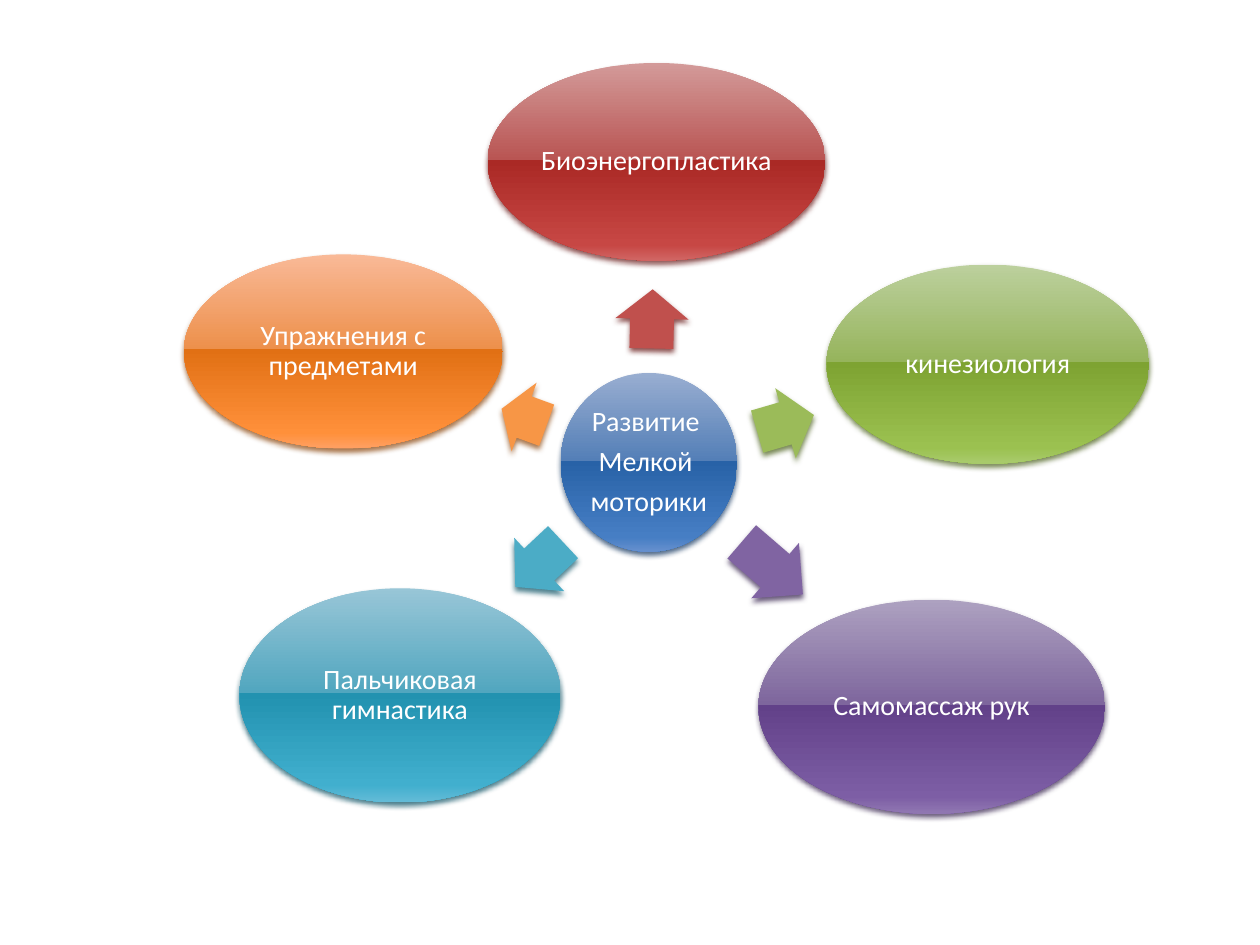
import pptx
import pptx.dml.color
import pptx.enum.shapes
import pptx.enum.text
import pptx.oxml
import pptx.oxml.ns
import pptx.util
from dataclasses import dataclass

Pt = pptx.util.Pt
RGB = pptx.dml.color.RGBColor.from_string
SHAPE = pptx.enum.shapes.MSO_SHAPE
qn = pptx.oxml.ns.qn
NS = pptx.oxml.ns.nsdecls("a")


@dataclass
class Theme:
    font: str = "Calibri"
    size: float = 16
    text: str = "FFFFFF"
    stops: tuple = (0, 49, 49, 92, 100)
    # Each palette: flat fill, shadow, then the five gloss colours
    blue: tuple = ("4F81BD", "315075", "99AED1 547FB7 2862A7 467EC4 6690CE")
    red: tuple = ("C0504D", "773130", "D39A99 B95553 AA2925 C74744 D16765")
    green: tuple = ("9BBB59", "607337", "BCD09D 96B45C 7EA332 9BC150 A9CB6D")
    purple: tuple = ("8064A2", "4F3E64", "ADA1C0 7E669D 624189 7D5EA5 9178B2")
    teal: tuple = ("4BACC6", "2E6A7A", "98C6D7 51A6BF 2292B0 41AFCE 63BBD7")
    orange: tuple = ("F79646", "995D2B", "F9B997 ED904B E17014 FF903A FFA063")


class Diagram:
    def __init__(self, slide, theme):
        self.slide, self.theme = slide, theme

    def shape(self, kind, box, shadow):
        s = self.slide.shapes.add_shape(kind, *(Pt(v) for v in box))
        s.line.fill.background()
        s.shadow.inherit = False
        s._element.spPr.find(qn("a:effectLst")).append(pptx.oxml.parse_xml(
            f'<a:outerShdw {NS} blurRad="{Pt(3.1)}" dist="{Pt(2)}" dir="5400000" '
            f'rotWithShape="0"><a:srgbClr val="{shadow}"><a:alpha val="83000"/>'
            '</a:srgbClr></a:outerShdw>'))
        return s

    def gloss(self, s, colors):
        s.fill.gradient()
        s.fill.gradient_angle = 270
        stops = s._element.spPr.find(qn("a:gradFill")).find(qn("a:gsLst"))
        for old in list(stops):
            stops.remove(old)
        for pos, color in zip(self.theme.stops, colors.split()):
            stops.append(pptx.oxml.parse_xml(
                f'<a:gs {NS} pos="{pos * 1000}"><a:srgbClr val="{color}"/></a:gs>'))

    def bubble(self, lines, box, palette):
        s = self.shape(SHAPE.OVAL, box, palette[1])
        self.gloss(s, palette[2])
        tf = s.text_frame
        tf.word_wrap = True
        tf.vertical_anchor = pptx.enum.text.MSO_ANCHOR.MIDDLE
        tf.margin_left = tf.margin_right = tf.margin_top = tf.margin_bottom = Pt(1.5)
        for i, line in enumerate(lines):
            p = tf.add_paragraph() if i else tf.paragraphs[0]
            p.alignment = pptx.enum.text.PP_ALIGN.CENTER
            p.line_spacing = 0.9
            p.space_after = Pt(0.35 * self.theme.size)
            r = p.add_run()
            r.text = line
            r.font.name = self.theme.font
            r.font.size = Pt(self.theme.size)
            r.font.color.rgb = RGB(self.theme.text)

    def arrow(self, left, top, length, angle, palette):
        s = self.shape(SHAPE.RIGHT_ARROW, (left, top, length, 41.8), palette[1])
        s.adjustments[0], s.adjustments[1] = 0.6, 0.5
        s.rotation = angle
        s.fill.solid()
        s.fill.fore_color.rgb = RGB(palette[0])


def main():
    prs = pptx.Presentation()
    prs.slide_width, prs.slide_height = Pt(720), Pt(540)
    theme = Theme()
    d = Diagram(prs.slides.add_slide(prs.slide_layouts[6]), theme)

    # Hub
    d.bubble(["Развитие ", "Мелкой ", "моторики"],
             (320.4, 213.1, 100.8, 102.2), theme.blue)

    # Branches, clockwise from the top: arrow (left, top, length, angle) and bubble
    branches = [
        ("Биоэнергопластика", theme.red,
         (355.7, 161.3, 33.8, 271.3), (278.6, 36, 193, 113)),
        ("кинезиология", theme.green,
         (432, 221, 33.8, 343.7), (472.3, 151.2, 184.3, 113.8)),
        ("Самомассаж рук", theme.purple,
         (418.3, 303.8, 46.1, 40.7), (433.4, 342.7, 198, 122.4)),
        ("Пальчиковая гимнастика", theme.teal,
         (289.4, 301.7, 37.4, 136.9), (136.8, 336.2, 183.6, 122.4)),
        ("Упражнения с предметами", theme.orange,
         (285.8, 217.4, 27.4, 200), (105.1, 145.4, 182.2, 110.9)),
    ]
    for label, palette, arrow, box in branches:
        d.arrow(*arrow, palette)
        d.bubble([label], box, palette)

    prs.save("out.pptx")


if __name__ == "__main__":
    main()
